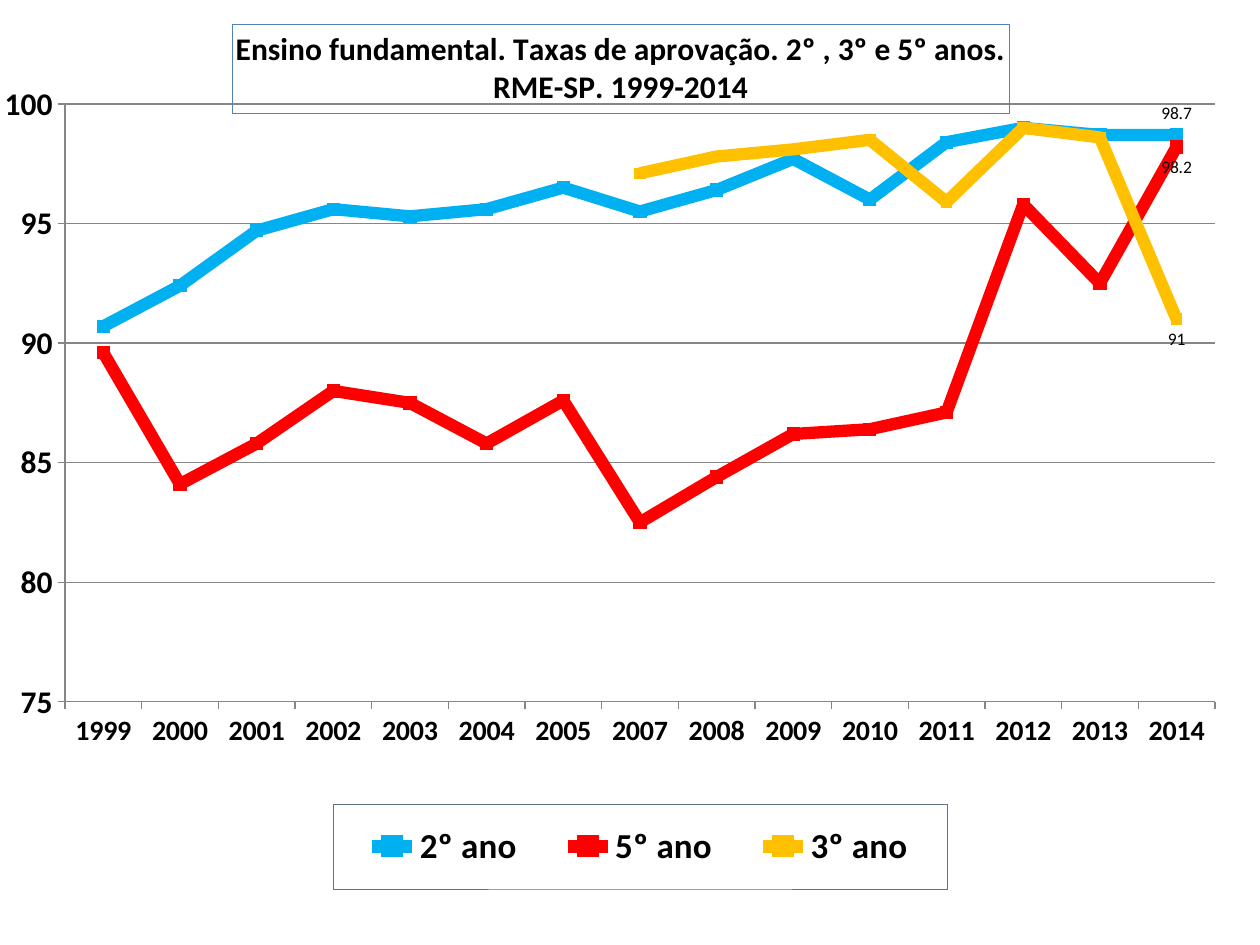
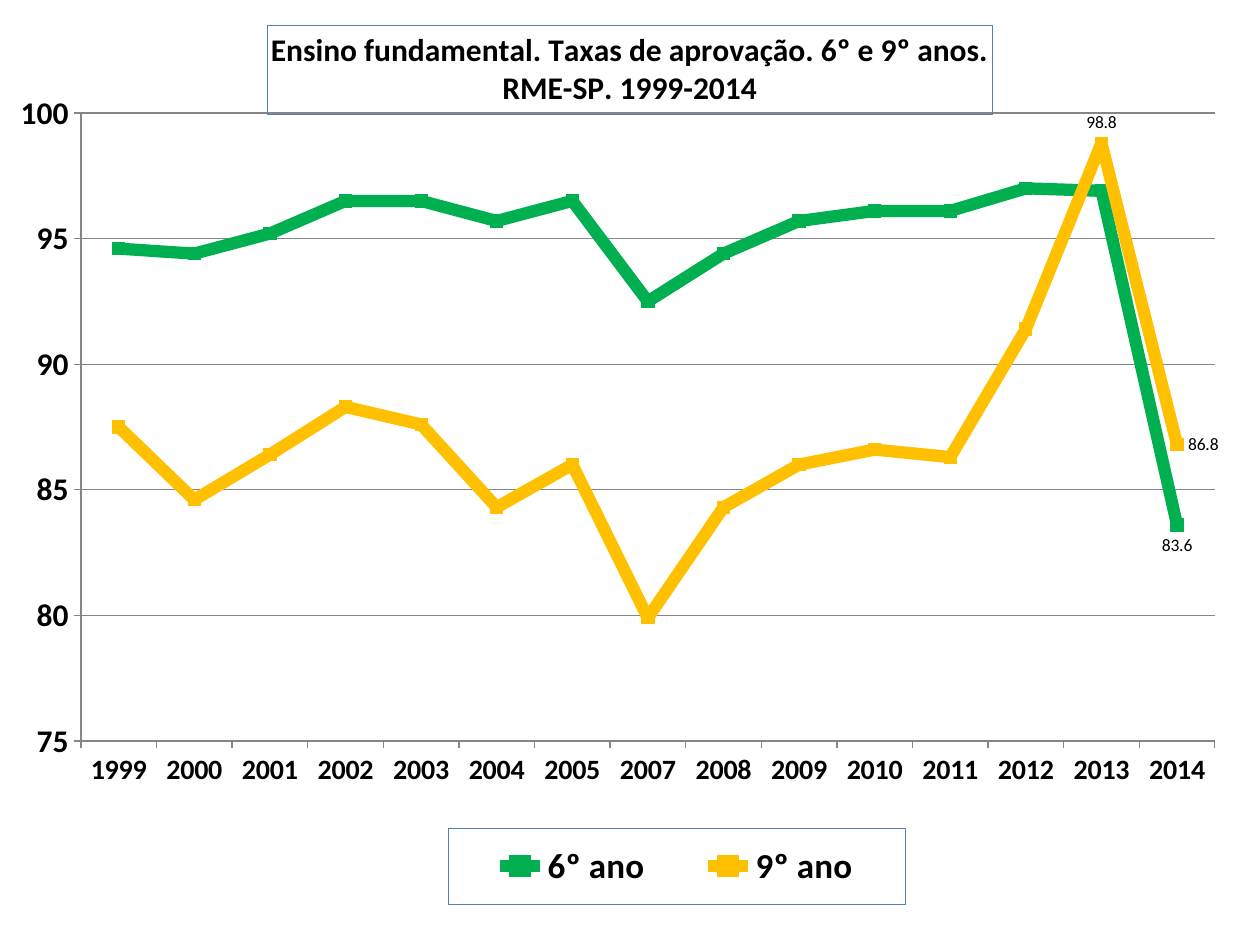
from lxml.etree import fromstring
from pptx import Presentation
from pptx.chart.data import CategoryChartData
from pptx.dml.color import RGBColor
from pptx.enum.chart import (XL_CHART_TYPE, XL_LABEL_POSITION, XL_LEGEND_POSITION,
                             XL_MARKER_STYLE, XL_TICK_MARK)
from pptx.oxml.ns import nsdecls, qn
from pptx.util import Pt

PX = 914400 / 126
FONT = "Calibri"
BLACK, GRID, BORDER = "000000", "868686", "4F81BD"
YEARS = [str(year) for year in range(1999, 2015) if year != 2006]
ABOVE, BELOW, RIGHT = (XL_LABEL_POSITION.ABOVE, XL_LABEL_POSITION.BELOW,
                       XL_LABEL_POSITION.RIGHT)


def color(hex_code):
    return RGBColor.from_string(hex_code)


def set_layout(element, index, box, chart_size, target=""):
    """Place a chart part at box, in px, inside a chart of the given size."""
    for layout in element.findall(qn("c:layout")):
        element.remove(layout)
    names = ("x", "y", "w", "h")[:len(box)]
    modes = "".join(f'<c:{name}Mode val="edge"/>' for name in names[:2])
    values = "".join(f'<c:{name} val="{length / chart_size[i % 2]:.4f}"/>'
                     for i, (name, length) in enumerate(zip(names, box)))
    element.insert(index, fromstring(
        f'<c:layout {nsdecls("c")}><c:manualLayout>{target}{modes}{values}'
        '</c:manualLayout></c:layout>'))


# Each series: name, colour, marker size, values, labelled points
charts = [
    {
        "title": "Ensino fundamental. Taxas de aprovação. 2º , 3º e 5º anos.\nRME-SP. 1999-2014",
        "size": (1245, 908), "title_at": (232, 24),
        "plot": (65, 104, 1150, 598), "legend": (333, 804, 614, 85),
        "legend_border": "5F7189",
        "series": [
            ("2º ano", "00B0F0", 7,
             [90.7, 92.4, 94.7, 95.6, 95.3, 95.6, 96.5, 95.5, 96.4, 97.7, 96, 98.4, 99,
              98.7, 98.7], {14: ABOVE}),
            ("5º ano", "FF0000", 7,
             [89.6, 84.1, 85.8, 88, 87.5, 85.8, 87.6, 82.5, 84.4, 86.2, 86.4, 87.1, 95.8,
              92.5, 98.2], {14: BELOW}),
            ("3º ano", "FFC000", 6,
             [None] * 7 + [97.1, 97.8, 98.1, 98.5, 95.9, 99, 98.6, 91], {14: BELOW}),
        ],
    },
    {
        "title": "Ensino fundamental. Taxas de aprovação. 6º e 9º anos.\nRME-SP. 1999-2014",
        "size": (1260, 919), "title_at": (267, 25),
        "plot": (81, 113, 1134, 628), "legend": (448, 828, 457, 76),
        "legend_border": BORDER,
        "series": [
            ("6º ano", "00B050", 7,
             [94.6, 94.4, 95.2, 96.5, 96.5, 95.7, 96.5, 92.5, 94.4, 95.7, 96.1, 96.1, 97,
              96.9, 83.6], {14: BELOW}),
            ("9º ano", "FFC000", 7,
             [87.5, 84.6, 86.4, 88.3, 87.6, 84.3, 86, 79.9, 84.3, 86, 86.6, 86.3, 91.4,
              98.8, 86.8], {13: ABOVE, 14: RIGHT}),
        ],
    },
]

presentation = Presentation()
presentation.slide_width = round(1260 * PX)
presentation.slide_height = round(945 * PX)

for content in charts:
    slide = presentation.slides.add_slide(presentation.slide_layouts[6])
    size = content["size"]

    # Chart and data
    data = CategoryChartData()
    data.categories = YEARS
    for name, _, _, values, _ in content["series"]:
        data.add_series(name, values)
    chart = slide.shapes.add_chart(XL_CHART_TYPE.LINE_MARKERS, 0, 0,
                                   *(round(length * PX) for length in size), data).chart
    chart.font.name = FONT
    chart.font.size = Pt(10)
    chart.font.color.rgb = color(BLACK)
    chart.plots[0].vary_by_categories = False
    set_layout(chart.plots[0]._element.getparent(), 0, content["plot"], size,
               '<c:layoutTarget val="inner"/>')

    # Framed title
    title = chart.chart_title
    title.text_frame.text = content["title"]
    for paragraph in title.text_frame.paragraphs:
        for run in paragraph.runs:
            run.font.name, run.font.size, run.font.bold = FONT, Pt(18), True
            run.font.color.rgb = color(BLACK)
    title.format.line.color.rgb = color(BORDER)
    title.format.line.width = Pt(0.25)
    set_layout(title._element, 1, content["title_at"], size)

    # Axes
    for axis, font_size in ((chart.category_axis, 16), (chart.value_axis, 18)):
        axis.tick_labels.font.name = FONT
        axis.tick_labels.font.size = Pt(font_size)
        axis.tick_labels.font.bold = True
        axis.major_tick_mark = XL_TICK_MARK.OUTSIDE
        axis.format.line.color.rgb = color(GRID)
    axis = chart.value_axis
    axis.minimum_scale, axis.maximum_scale, axis.major_unit = 75, 100, 5
    axis.tick_labels.number_format = "#,##0"
    axis.tick_labels.number_format_is_linked = False
    axis.has_major_gridlines = True
    axis.major_gridlines.format.line.color.rgb = color(GRID)

    # Lines, markers and point labels
    for series, (_, shade, marker_size, _, labels) in zip(chart.series, content["series"]):
        series.smooth = False
        series.format.line.color.rgb = color(shade)
        series.format.line.width = Pt(7)
        series.marker.style = XL_MARKER_STYLE.SQUARE
        series.marker.size = marker_size
        series.marker.format.fill.solid()
        series.marker.format.fill.fore_color.rgb = color(shade)
        series.marker.format.line.color.rgb = color(shade)
        for point, position in labels.items():
            series.points[point].data_label.position = position

    # Framed legend
    chart.has_legend = True
    legend = chart.legend
    legend.position = XL_LEGEND_POSITION.RIGHT
    legend.include_in_layout = False
    set_layout(legend._element, 1, content["legend"], size)
    legend._element.append(fromstring(
        f'<c:spPr {nsdecls("c", "a")}><a:ln w="3175"><a:solidFill>'
        f'<a:srgbClr val="{content["legend_border"]}"/></a:solidFill></a:ln></c:spPr>'))
    legend.font.name = FONT
    legend.font.size = Pt(20)
    legend.font.bold = True

presentation.save("out.pptx")
